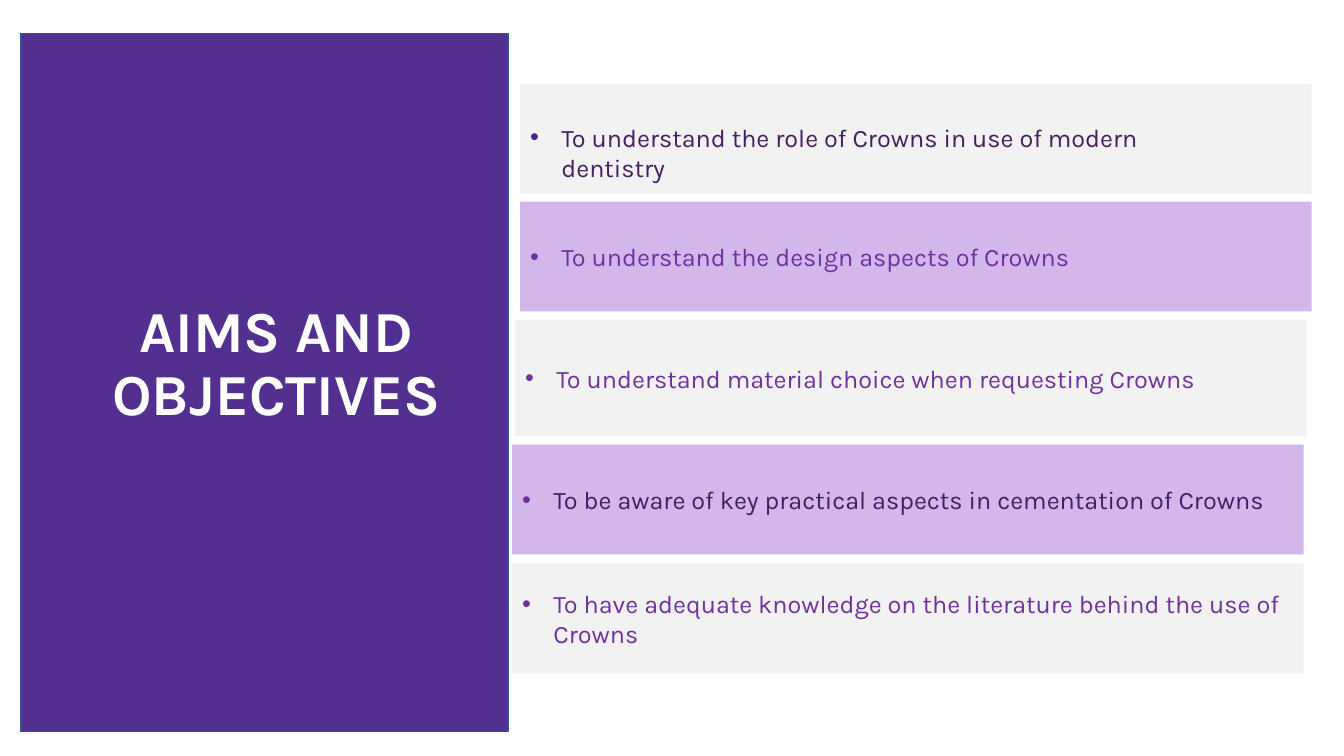
from dataclasses import dataclass

from lxml.etree import SubElement
from pptx import Presentation
from pptx.dml.color import RGBColor
from pptx.enum.shapes import MSO_SHAPE
from pptx.enum.text import MSO_ANCHOR, PP_ALIGN
from pptx.oxml.ns import qn
from pptx.shapes.autoshape import Shape
from pptx.slide import Slide
from pptx.text.text import TextFrame
from pptx.util import Emu, Pt

PX = 9144  # 100 px to the inch
FONT = "Karla"
GREY, LILAC = "F2F2F2", "D3B6EA"
PURPLE, DARK, VIOLET = "7030A0", "441D63", "521B93"
BAR_W, BAR_H = 785, 109
INDENT = 31


@dataclass(frozen=True)
class Box:
    x: int
    y: int
    w: int
    h: int

    def emu(self) -> list[Emu]:
        return [Emu(v * PX) for v in (self.x, self.y, self.w, self.h)]


@dataclass(frozen=True)
class Objective:
    text: str
    bar: Box
    fill: str
    color: str
    bullet: str = PURPLE
    text_box: Box | None = None


OBJECTIVES = [
    Objective("To understand the role of Crowns in use of modern dentistry",
              Box(516, 83, BAR_W, BAR_H), GREY, DARK, VIOLET, Box(516, 111, 722, 81)),
    Objective("To understand the design aspects of Crowns",
              Box(516, 200, BAR_W, BAR_H), LILAC, PURPLE),
    Objective("To understand material choice when requesting Crowns",
              Box(511, 317, BAR_W, 116), GREY, PURPLE),
    Objective("To be aware of key practical aspects in cementation of Crowns",
              Box(508, 441, BAR_W, BAR_H), LILAC, DARK),
    Objective("To have adequate knowledge on the literature behind the use of Crowns",
              Box(508, 559, BAR_W, BAR_H), GREY, PURPLE),
]


def rgb(color: str) -> RGBColor:
    return RGBColor.from_string(color)


def add_rect(s: Slide, box: Box, fill: str, line: str | None = None) -> Shape:
    sp = s.shapes.add_shape(MSO_SHAPE.RECTANGLE, *box.emu())
    sp.shadow.inherit = False
    sp.fill.solid()
    sp.fill.fore_color.rgb = rgb(fill)
    if line:
        sp.line.color.rgb = rgb(line)
        sp.line.width = Pt(1)
    else:
        sp.line.fill.background()
    return sp


def write(tf: TextFrame, text: str, size: float, color: str, align: PP_ALIGN,
          inset_y: int, bold: bool = False) -> None:
    tf.word_wrap = True
    tf.margin_left = tf.margin_right = Emu(10 * PX)
    tf.margin_top = tf.margin_bottom = Emu(inset_y * PX)
    p = tf.paragraphs[0]
    p.alignment = align
    r = p.add_run()
    r.text = text
    r.font.name = FONT
    r.font.size = Pt(size)
    r.font.bold = bold
    r.font.color.rgb = rgb(color)


def add_bullet(tf: TextFrame, color: str) -> None:
    pPr = tf.paragraphs[0]._p.get_or_add_pPr()
    pPr.set("marL", str(INDENT * PX))
    pPr.set("indent", str(-INDENT * PX))
    clr = SubElement(pPr, qn("a:buClr"))
    SubElement(clr, qn("a:srgbClr"), val=color)
    SubElement(pPr, qn("a:buFont"), typeface="Arial")
    SubElement(pPr, qn("a:buChar"), char="•")


def add_objective(s: Slide, item: Objective) -> None:
    sp = add_rect(s, item.bar, item.fill)
    anchor = MSO_ANCHOR.MIDDLE
    if item.text_box:
        sp = s.shapes.add_textbox(*item.text_box.emu())
        anchor = MSO_ANCHOR.TOP
    tf = sp.text_frame
    tf.vertical_anchor = anchor
    write(tf, item.text, 18, item.color, PP_ALIGN.LEFT, inset_y=10)
    add_bullet(tf, item.bullet)


def add_title(s: Slide) -> None:
    add_rect(s, Box(21, 33, 483, 693), "533090", "31538F")
    tf = s.shapes.add_textbox(*Box(65, 295, 418, 159).emu()).text_frame
    write(tf, "AIMS AND OBJECTIVES", 41.4, "FFFFFF", PP_ALIGN.CENTER, inset_y=5, bold=True)
    tf.paragraphs[0].line_spacing = 0.9


def main() -> None:
    prs = Presentation()
    prs.slide_width, prs.slide_height = Emu(1333 * PX), Emu(750 * PX)
    s = prs.slides.add_slide(prs.slide_layouts[6])
    add_title(s)
    for item in OBJECTIVES:
        add_objective(s, item)
    prs.save("out.pptx")


if __name__ == "__main__":
    main()
